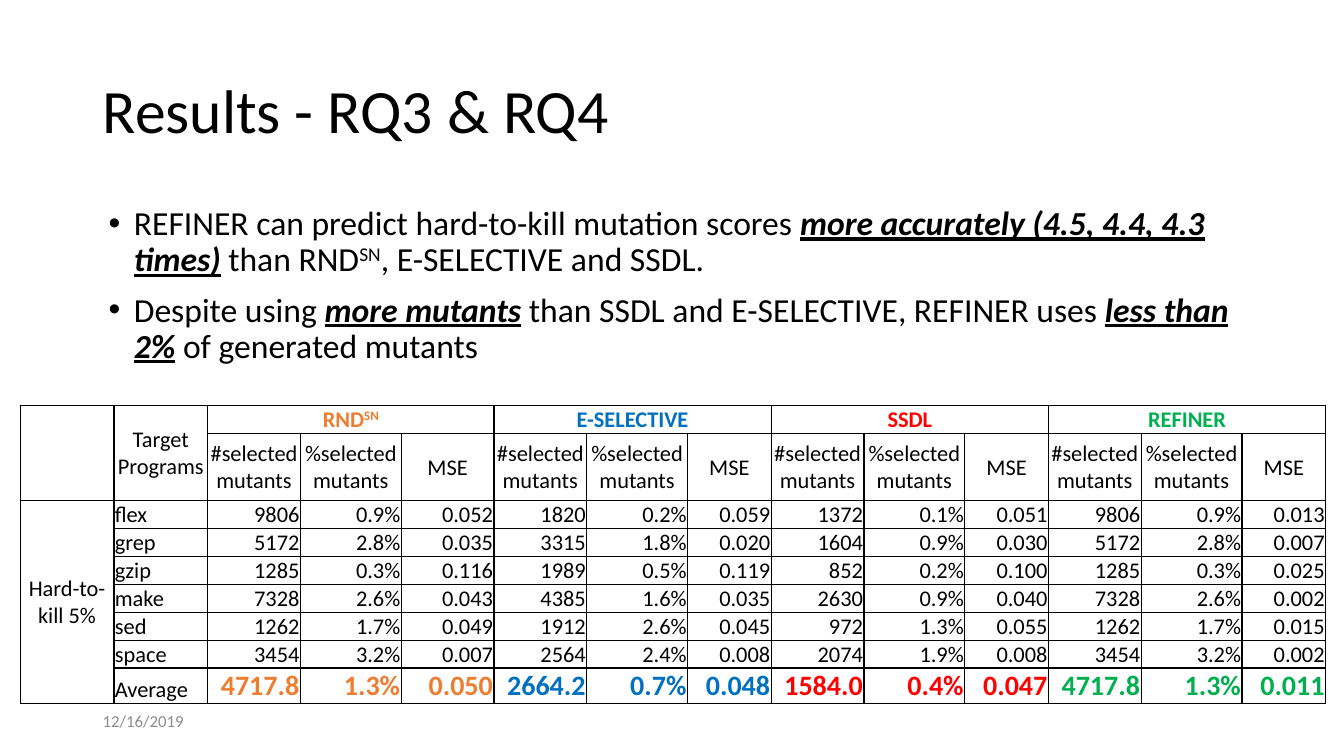
from lxml import etree
from pptx import Presentation
from pptx.dml.color import RGBColor
from pptx.enum.text import MSO_ANCHOR, PP_ALIGN
from pptx.oxml.ns import qn
from pptx.util import Inches, Pt

MIDDLE, BOTTOM, TOP = MSO_ANCHOR.MIDDLE, MSO_ANCHOR.BOTTOM, MSO_ANCHOR.TOP
LEFT, CENTER, RIGHT = PP_ALIGN.LEFT, PP_ALIGN.CENTER, PP_ALIGN.RIGHT
FONT = "Calibri"
COLORS = {"text": "000000", "date": "8C8C8C", "orange": "ED7D31",
          "blue": "0070C0", "red": "FF0000", "green": "00B050"}
STRESS = {"bold": True, "italic": True, "underline": True}
RAISED = {"raised": True}

TITLE = "Results - RQ3 & RQ4"
DATE = "12/16/2019"
BULLETS = [
    [("REFINER can predict hard-to-kill mutation scores ", {}),
     ("more accurately (4.5, 4.4, 4.3 times)", STRESS),
     (" than RND", {}), ("SN", RAISED), (", E-SELECTIVE and SSDL.", {})],
    [("Despite using ", {}), ("more mutants", STRESS),
     (" than SSDL and E-SELECTIVE, REFINER uses ", {}),
     ("less than 2%", STRESS), (" of generated mutants", {})],
]
METHODS = [
    ([("RND", {}), ("SN", RAISED)], "orange"),
    ([("E-SELECTIVE", {})], "blue"),
    ([("SSDL", {})], "red"),
    ([("REFINER", {})], "green"),
]
MEASURES = ["#selected mutants", "%selected mutants", "MSE"]
PROGRAMS_HEAD = "Target Programs"
GROUP_HEAD = "Hard-to-kill 5%"
RESULTS = [
    ("flex", "9806 0.9% 0.052 1820 0.2% 0.059 1372 0.1% 0.051 9806 0.9% 0.013"),
    ("grep", "5172 2.8% 0.035 3315 1.8% 0.020 1604 0.9% 0.030 5172 2.8% 0.007"),
    ("gzip", "1285 0.3% 0.116 1989 0.5% 0.119 852 0.2% 0.100 1285 0.3% 0.025"),
    ("make", "7328 2.6% 0.043 4385 1.6% 0.035 2630 0.9% 0.040 7328 2.6% 0.002"),
    ("sed", "1262 1.7% 0.049 1912 2.6% 0.045 972 1.3% 0.055 1262 1.7% 0.015"),
    ("space", "3454 3.2% 0.007 2564 2.4% 0.008 2074 1.9% 0.008 3454 3.2% 0.002"),
    ("Average", "4717.8 1.3% 0.050 2664.2 0.7% 0.048 1584.0 0.4% 0.047 4717.8 1.3% 0.011"),
]
COLUMN_WIDTHS = [0.93, 0.93, 0.92, 1, 0.92] + [0.92, 1, 0.83] * 3
ROW_HEIGHTS = [0.27, 0.67] + [0.27] * 6 + [0.35]
TABLE_AT = (0.2, 4.02)


def add_spans(para, spans, size, color="text", **common):
    for text, extra in spans:
        span = para.add_run()
        span.text = text
        values = {"name": FONT, "size": Pt(size), **common, **extra}
        raised = values.pop("raised", False)
        for name, value in values.items():
            setattr(span.font, name, value)
        span.font.color.rgb = RGBColor.from_string(COLORS[color])
        if raised:
            span.font._element.set("baseline", "30000")


def add_box(slide, place, anchor):
    frame = slide.shapes.add_textbox(*map(Inches, place)).text_frame
    frame.word_wrap = True
    frame.vertical_anchor = anchor
    return frame


def add_bullet(para):
    properties = para._p.get_or_add_pPr()
    properties.set("marL", str(Inches(0.25)))
    properties.set("indent", str(-Inches(0.25)))
    etree.SubElement(properties, qn("a:buFont"), typeface="Arial")
    etree.SubElement(properties, qn("a:buChar"), char="•")


def format_cell(cell):
    margins = {"margin_left": 0.01, "margin_right": 0.01,
               "margin_top": 0.01, "margin_bottom": 0}
    for name, value in margins.items():
        setattr(cell, name, Inches(value))
    cell.fill.background()
    properties = cell._tc.get_or_add_tcPr()
    for index, side in enumerate(("lnL", "lnR", "lnT", "lnB")):
        line = etree.Element(qn(f"a:{side}"), w=str(Pt(1)))
        fill = etree.SubElement(line, qn("a:solidFill"))
        etree.SubElement(fill, qn("a:srgbClr"), val=COLORS["text"])
        properties.insert(index, line)
    if not cell.text_frame.text:
        para = cell.text_frame.paragraphs[0]
        etree.SubElement(para._p, qn("a:endParaRPr"), sz="1600")


def fill_cell(cell, spans, anchor, align, size=16, color="text", bold=False):
    cell.vertical_anchor = anchor
    para = cell.text_frame.paragraphs[0]
    para.alignment = align
    add_spans(para, spans, size, color, bold=bold)


def add_results(slide):
    frame = slide.shapes.add_table(
        len(ROW_HEIGHTS), len(COLUMN_WIDTHS), *map(Inches, TABLE_AT),
        Inches(sum(COLUMN_WIDTHS)), Inches(sum(ROW_HEIGHTS)))
    table = frame.table
    table.first_row = table.horz_banding = False
    for column, width in zip(table.columns, COLUMN_WIDTHS):
        column.width = Inches(width)
    for row, height in zip(table.rows, ROW_HEIGHTS):
        row.height = Inches(height)

    last_row = len(ROW_HEIGHTS) - 1
    for column in (0, 1):
        table.cell(0, column).merge(table.cell(1, column))
    table.cell(2, 0).merge(table.cell(last_row, 0))
    fill_cell(table.cell(0, 1), [(PROGRAMS_HEAD, {})], MIDDLE, CENTER)
    fill_cell(table.cell(2, 0), [(GROUP_HEAD, {})], MIDDLE, CENTER)

    for index, (name, color) in enumerate(METHODS):
        start = 2 + index * len(MEASURES)
        table.cell(0, start).merge(table.cell(0, start + len(MEASURES) - 1))
        fill_cell(table.cell(0, start), name, BOTTOM, CENTER, color=color, bold=True)
        for column, measure in enumerate(MEASURES, start):
            fill_cell(table.cell(1, column), [(measure, {})], MIDDLE, CENTER)

    for row, (program, values) in enumerate(RESULTS, 2):
        fill_cell(table.cell(row, 1), [(program, {})], BOTTOM, LEFT)
        for index, value in enumerate(values.split()):
            look = {}
            if row == last_row:
                color = METHODS[index // len(MEASURES)][1]
                look = {"size": 20, "color": color, "bold": True}
            fill_cell(table.cell(row, index + 2), [(value, {})], BOTTOM, RIGHT, **look)

    for cell in table.iter_cells():
        format_cell(cell)


def main():
    deck = Presentation()
    deck.slide_width, deck.slide_height = Inches(13.33), Inches(7.5)
    slide = deck.slides.add_slide(deck.slide_layouts[6])

    title = add_box(slide, (0.92, 0.4, 11.5, 1.45), MIDDLE).paragraphs[0]
    title.line_spacing = 0.9
    add_spans(title, [(TITLE, {})], 44)

    date = add_box(slide, (0.92, 6.95, 3, 0.4), MIDDLE).paragraphs[0]
    add_spans(date, [(DATE, {})], 12, "date")

    body = add_box(slide, (0.98, 2, 11.43, 1.84), TOP)
    for index, spans in enumerate(BULLETS):
        para = body.add_paragraph() if index else body.paragraphs[0]
        para.line_spacing = 0.9
        para.space_before = Pt(10)
        add_bullet(para)
        add_spans(para, spans, 24)

    add_results(slide)
    deck.save("out.pptx")


if __name__ == "__main__":
    main()
